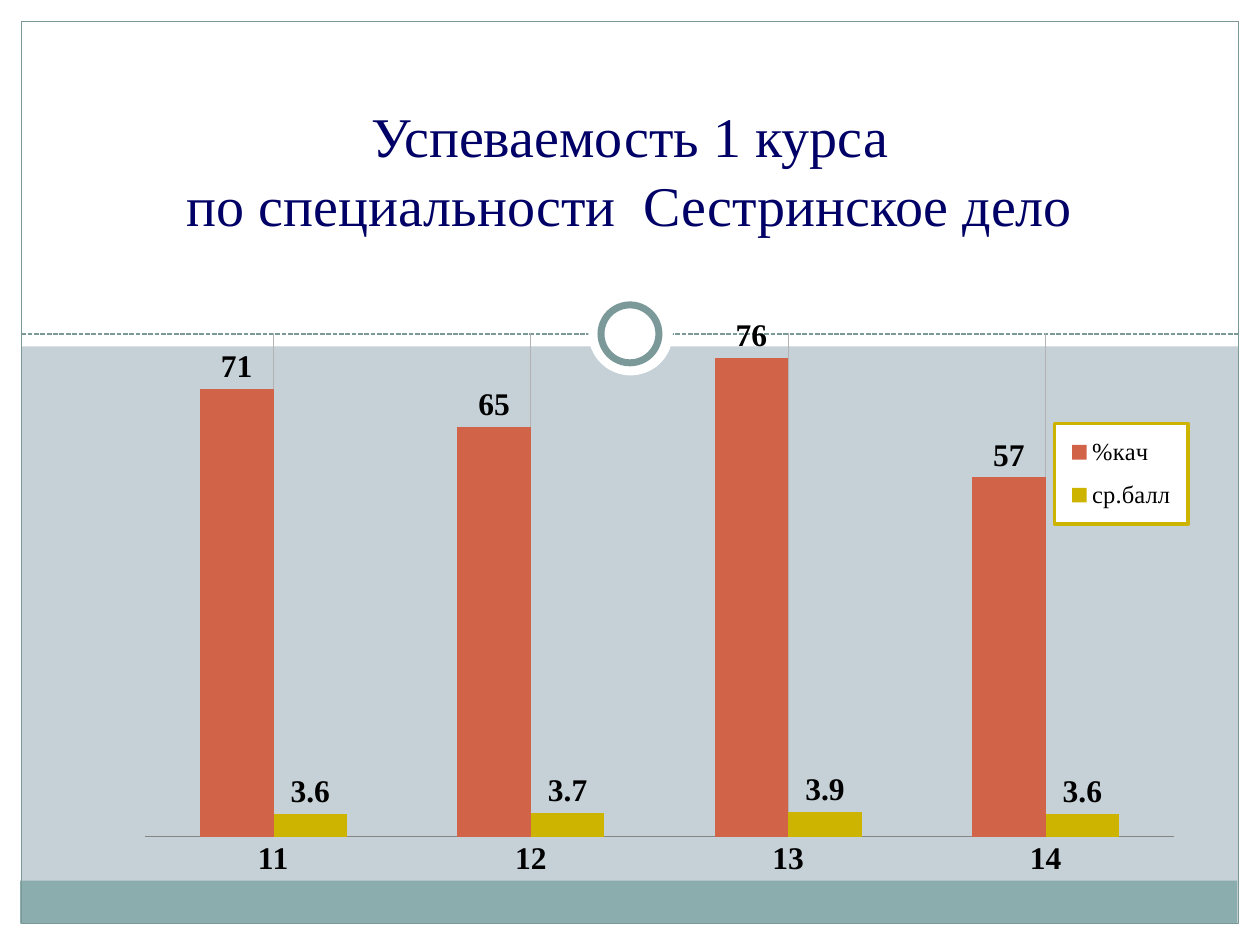
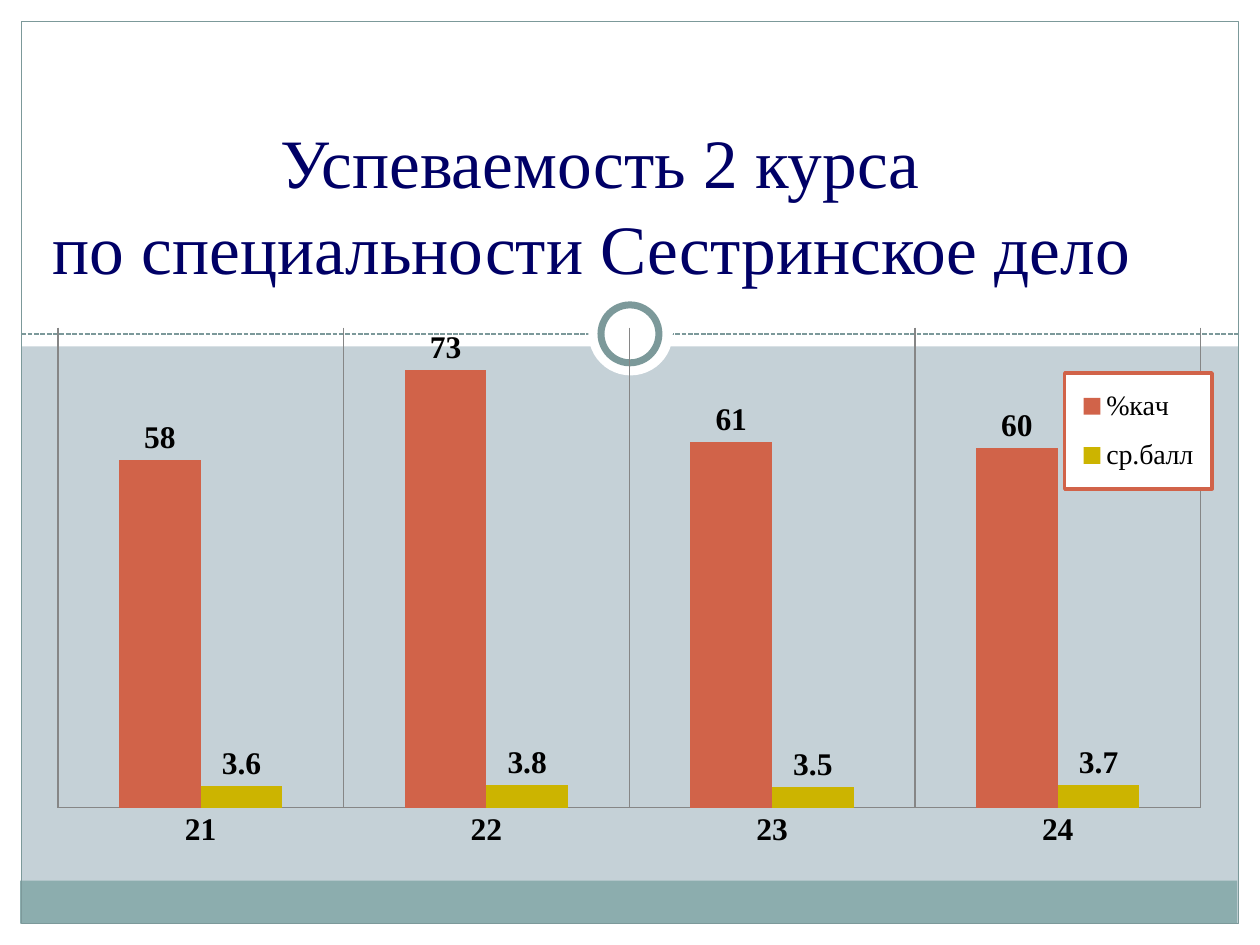
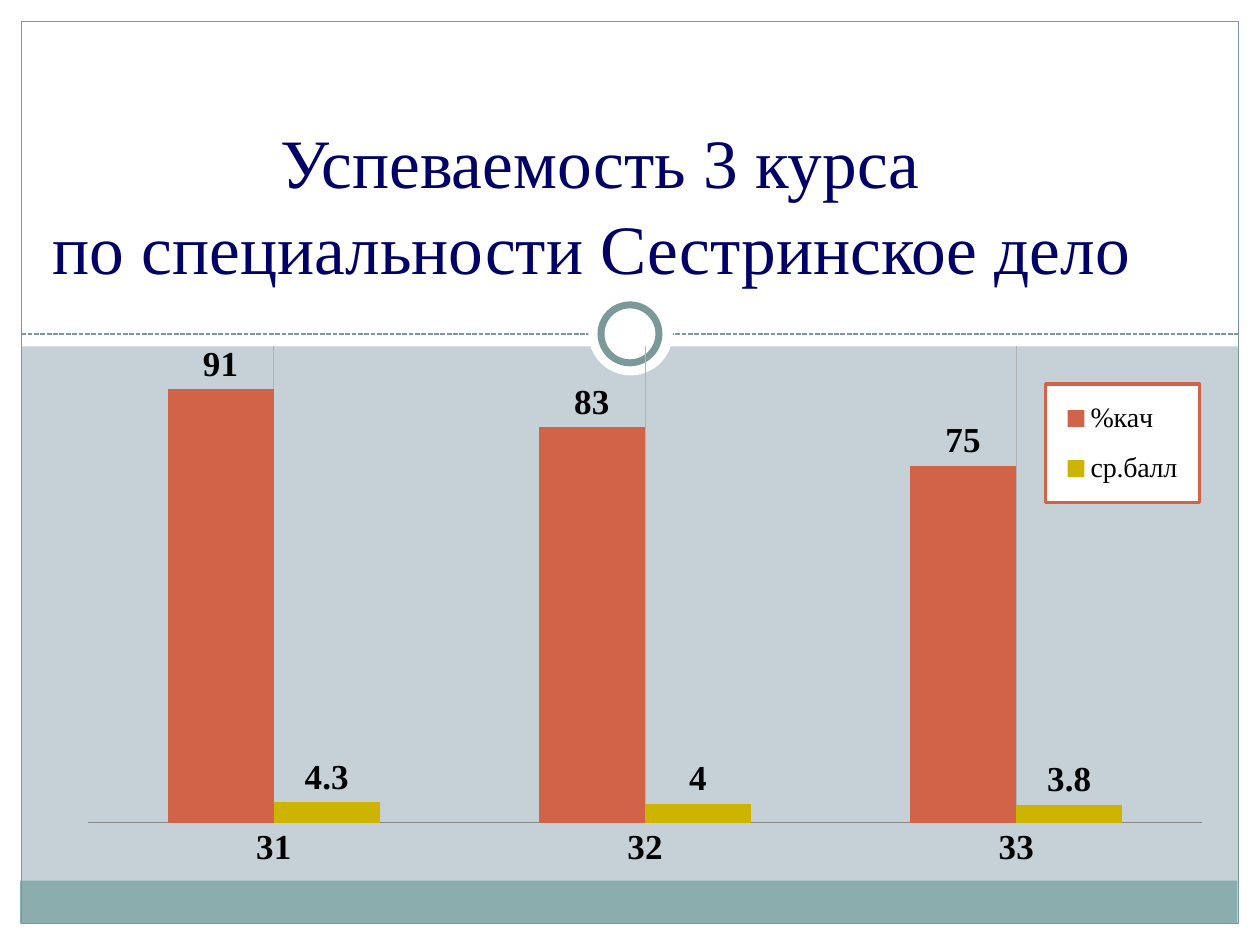
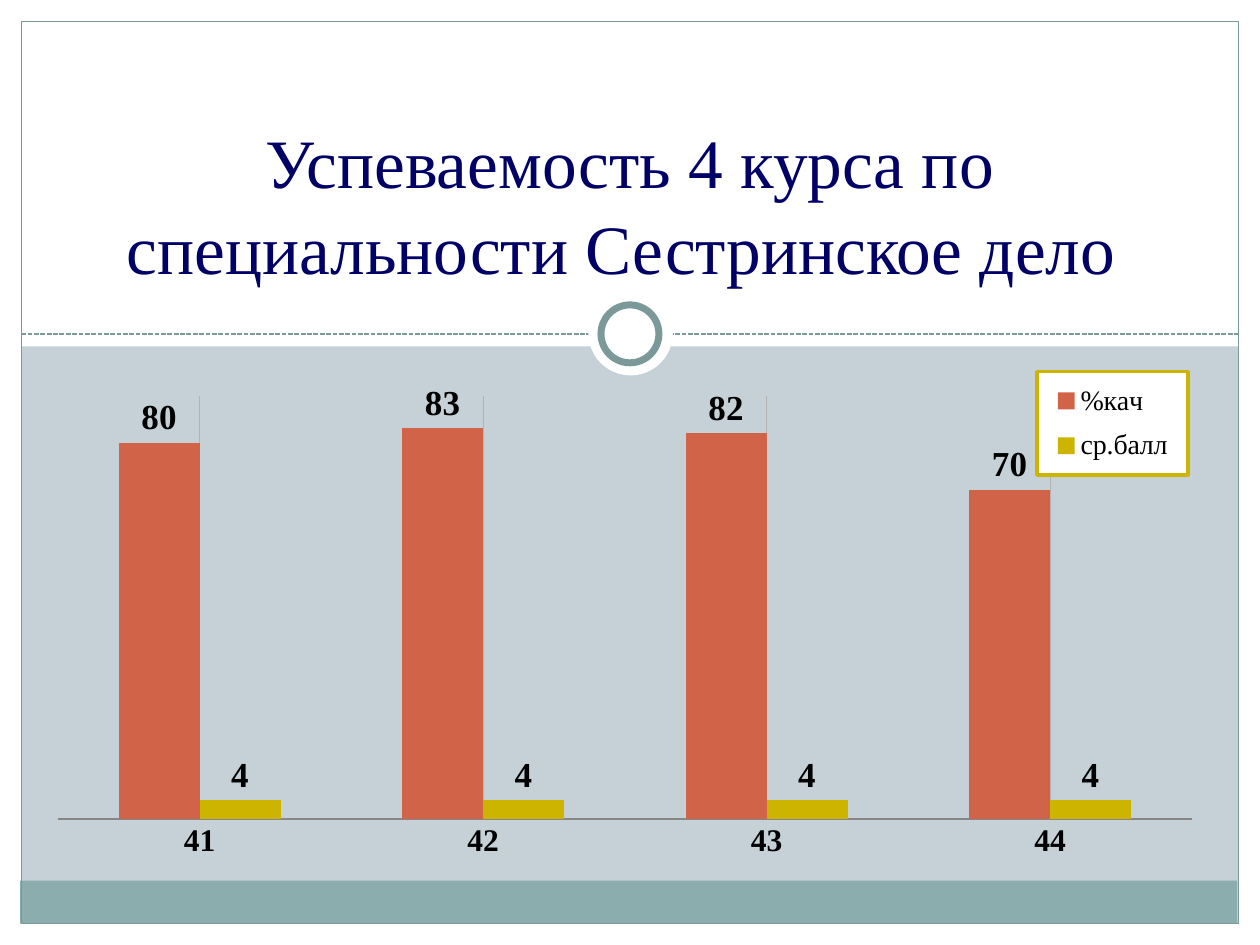
import copy

import pptx
import pptx.chart.data
import pptx.dml.color
import pptx.enum.chart
import pptx.enum.dml
import pptx.enum.shapes
import pptx.enum.text
import pptx.oxml
import pptx.oxml.ns
import pptx.util
from pptx.util import Inches

WHITE, BACKDROP, BAND, RULE = "FFFFFF", "C5D1D7", "8CADAE", "7C999A"
NAVY, BLACK, RED, GOLD = "000066", "000000", "D16349", "CCB400"
AXIS_GRAY, GRID_GRAY = "868686", "B3B3B3"
SERIF, CHART_FONT = "Times New Roman", "TeX Gyre Schola"
SHAPE = pptx.enum.shapes.MSO_SHAPE

# Boxes are (left, top, width, height) in inches on the slide
COURSES = [
    dict(title="Успеваемость 1 курса\v по специальности  Сестринское дело ",
         title_box=(0.75, 0.42, 8.5, 1.52), title_size=32,
         groups=["11", "12", "13", "14"],
         quality=[71, 65, 76, 57], average=[3.6, 3.7, 3.9, 3.6],
         chart_box=(0.98, 2.18, 8.5, 4.88), plot_box=(1.15, 2.64, 8.17, 4),
         legend_box=(8.37, 3.36, 1.06, 0.8), legend_size=14, legend_line=GOLD,
         top_value=80, group_size=18, label_size=18, boundary_grid=False),
    dict(title="Успеваемость 2 курса\vпо специальности Сестринское дело ",
         title_box=(0.28, 0.42, 8.97, 1.92), title_size=39.6,
         groups=["21", "22", "23", "24"],
         quality=[58, 73, 61, 60], average=[3.6, 3.8, 3.5, 3.7],
         chart_box=(0.28, 2.1, 9.45, 4.72), plot_box=(0.46, 2.6, 9.07, 3.81),
         legend_box=(8.45, 2.96, 1.17, 0.92), legend_size=16, legend_line=RED,
         top_value=80, group_size=18, label_size=18, boundary_grid=True),
    dict(title="Успеваемость 3 курса\vпо специальности Сестринское дело ",
         title_box=(0.28, 0.42, 8.97, 1.92), title_size=39.6,
         groups=["31", "32", "33"],
         quality=[91, 83, 75], average=[4.3, 4, 3.8],
         chart_box=(0.51, 2.25, 9.21, 4.73), plot_box=(0.7, 2.75, 8.84, 3.78),
         legend_box=(8.3, 3.05, 1.22, 0.94), legend_size=16, legend_line=RED,
         top_value=100, group_size=20, label_size=20, boundary_grid=False),
    dict(title="Успеваемость 4 курса по специальности Сестринское дело ",
         title_box=(0.75, 0.42, 8.5, 1.92), title_size=39.6,
         groups=["41", "42", "43", "44"],
         quality=[80, 83, 82, 70], average=[4, 4, 4, 4],
         chart_box=(0.28, 2.65, 9.37, 4.25), plot_box=(0.46, 3.14, 9, 3.36),
         legend_box=(8.23, 2.95, 1.2, 0.82), legend_size=16, legend_line=GOLD,
         top_value=90, group_size=18, label_size=20, boundary_grid=False),
]


def rgb(color):
    return pptx.dml.color.RGBColor.from_string(color)


def inches(box):
    return [Inches(length) for length in box]


def style_font(font, size, color=BLACK, bold=False, name=SERIF):
    font.name, font.size, font.bold = name, pptx.util.Pt(size), bold
    font.color.rgb = rgb(color)


def style_line(line, color, width):
    line.color.rgb = rgb(color)
    line.width = pptx.util.Pt(width)


# Shared frame, kept on the layout
def add_panel(shapes, kind, box, fill=None, line=None, width=0.75):
    panel = shapes.add_shape(kind, *inches(box))
    panel.shadow.inherit = False
    if fill:
        panel.fill.solid()
        panel.fill.fore_color.rgb = rgb(fill)
    else:
        panel.fill.background()
    if line:
        style_line(panel.line, line, width)
    else:
        panel.line.fill.background()
    return panel


def add_divider(shapes):
    divider = shapes.add_connector(pptx.enum.shapes.MSO_CONNECTOR.STRAIGHT,
                                   *inches((0.17, 2.65, 9.83, 2.65)))
    style_line(divider.line, RULE, 0.9)
    divider.line.dash_style = pptx.enum.dml.MSO_LINE.SQUARE_DOT
    divider.element.spPr.append(pptx.oxml.parse_xml(
        f'<a:effectLst {pptx.oxml.ns.nsdecls("a")}/>'))
    return divider


def decorate_layout(layout, slide):
    """Draw the frame with the slide's shape tools, then move it to the layout."""
    layout.background.fill.solid()
    layout.background.fill.fore_color.rgb = rgb(BACKDROP)
    shapes = slide.shapes
    margins = [(0, 7.33, 10, 0.17), (9.83, 0, 0.17, 7.5),
               (0, 0, 0.17, 7.5), (0, 0, 10, 2.75)]
    frame = [add_panel(shapes, SHAPE.RECTANGLE, box, WHITE) for box in margins]
    frame += [
        add_panel(shapes, SHAPE.RECTANGLE, (0.16, 6.99, 9.66, 0.34), BAND),
        add_divider(shapes),
        add_panel(shapes, SHAPE.RECTANGLE, (0.17, 0.17, 9.66, 7.16), line=RULE),
        add_panel(shapes, SHAPE.OVAL, (4.67, 2.31, 0.67, 0.67), WHITE),
        add_panel(shapes, SHAPE.OVAL, (4.77, 2.42, 0.46, 0.46), WHITE, RULE, 4),
    ]
    for part in frame:
        layout.shapes.element.append(part.element)


# Title
def set_title(slide, text, box, size):
    title = slide.shapes.title
    title.left, title.top, title.width, title.height = inches(box)
    frame = title.text_frame
    frame.text = text
    frame.word_wrap = True
    frame.auto_size = pptx.enum.text.MSO_AUTO_SIZE.NONE
    frame.vertical_anchor = pptx.enum.text.MSO_ANCHOR.BOTTOM
    paragraph = frame.paragraphs[0]
    paragraph.alignment = pptx.enum.text.PP_ALIGN.CENTER
    paragraph.line_spacing = 1.04
    for run in paragraph.runs:
        style_font(run.font, size, NAVY)
    # A line break takes the size of the text around it
    for line_break in paragraph._p.findall(pptx.oxml.ns.qn("a:br")):
        line_break.append(copy.deepcopy(paragraph.runs[0]._r.rPr))


# Chart
def outline_xml(color, width):
    return (f'<a:ln w="{pptx.util.Pt(width)}"><a:solidFill>'
            f'<a:srgbClr val="{color}"/></a:solidFill></a:ln>')


def chart_format(content):
    return pptx.oxml.parse_xml(
        f'<c:spPr {pptx.oxml.ns.nsdecls("c", "a")}>{content}</c:spPr>')


def place_in_chart(element, index, box, chart_box, target=""):
    """Give a chart part a manual layout as fractions of the chart box."""
    for old in element.findall(pptx.oxml.ns.qn("c:layout")):
        element.remove(old)
    left, top, width, height = chart_box
    fractions = {"x": (box[0] - left) / width, "y": (box[1] - top) / height,
                 "w": box[2] / width, "h": box[3] / height}
    modes = '<c:xMode val="edge"/><c:yMode val="edge"/>'
    values = "".join(f'<c:{key} val="{value:.4f}"/>'
                     for key, value in fractions.items())
    element.insert(index, pptx.oxml.parse_xml(
        f'<c:layout {pptx.oxml.ns.nsdecls("c")}><c:manualLayout>'
        f'{target}{modes}{values}</c:manualLayout></c:layout>'))


def style_series(series, color, label_size):
    series.format.fill.solid()
    series.format.fill.fore_color.rgb = rgb(color)
    series.invert_if_negative = False
    labels = series.data_labels
    labels.show_value = True
    labels.position = pptx.enum.chart.XL_LABEL_POSITION.OUTSIDE_END
    style_font(labels.font, label_size, bold=True)


def style_axes(chart, top_value, group_size, boundary_grid):
    scores = chart.value_axis
    scores.minimum_scale, scores.maximum_scale = 0, top_value
    scores.has_major_gridlines = False
    scores.visible = False
    groups = chart.category_axis
    groups.major_tick_mark = pptx.enum.chart.XL_TICK_MARK.NONE
    groups.minor_tick_mark = pptx.enum.chart.XL_TICK_MARK.NONE
    style_font(groups.tick_labels.font, group_size, bold=True)
    style_line(groups.format.line, AXIS_GRAY, 0.75)
    groups.has_major_gridlines = boundary_grid
    groups.has_minor_gridlines = not boundary_grid
    if boundary_grid:
        style_line(groups.major_gridlines.format.line, AXIS_GRAY, 0.75)
    else:
        middle_grid = groups._element.find(pptx.oxml.ns.qn("c:minorGridlines"))
        middle_grid.append(chart_format(outline_xml(GRID_GRAY, 0.5)))


def add_legend(chart, box, chart_box, size, line):
    chart.has_legend = True
    legend = chart.legend
    legend.position = pptx.enum.chart.XL_LEGEND_POSITION.TOP
    legend.include_in_layout = False
    style_font(legend.font, size)
    element = legend._element
    place_in_chart(element, 1, box, chart_box)
    white_fill = f'<a:solidFill><a:srgbClr val="{WHITE}"/></a:solidFill>'
    element.find(pptx.oxml.ns.qn("c:txPr")).addprevious(
        chart_format(white_fill + outline_xml(line, 2)))


def add_results_chart(slide, course):
    results = pptx.chart.data.CategoryChartData()
    results.categories = course["groups"]
    results.add_series("%кач", course["quality"])
    results.add_series("ср.балл", course["average"])
    chart_box = course["chart_box"]
    chart = slide.shapes.add_chart(
        pptx.enum.chart.XL_CHART_TYPE.COLUMN_CLUSTERED,
        *inches(chart_box), results).chart
    chart.has_title = False
    style_font(chart.font, 10, name=CHART_FONT)
    plot = chart.plots[0]
    plot.gap_width, plot.overlap, plot.vary_by_categories = 150, 0, False
    for series, color in zip(plot.series, (RED, GOLD)):
        style_series(series, color, course["label_size"])
    style_axes(chart, course["top_value"], course["group_size"],
               course["boundary_grid"])
    place_in_chart(chart._chartSpace.chart.plotArea, 0, course["plot_box"],
                   chart_box, '<c:layoutTarget val="inner"/>')
    add_legend(chart, course["legend_box"], chart_box,
               course["legend_size"], course["legend_line"])


def main():
    deck = pptx.Presentation()
    deck.slide_width, deck.slide_height = Inches(10), Inches(7.5)
    layout = deck.slide_layouts[0]
    for number, course in enumerate(COURSES):
        slide = deck.slides.add_slide(layout)
        subtitle = slide.placeholders[1].element
        subtitle.getparent().remove(subtitle)
        if number == 0:
            decorate_layout(layout, slide)
        set_title(slide, course["title"], course["title_box"],
                  course["title_size"])
        add_results_chart(slide, course)
    deck.save("out.pptx")


if __name__ == "__main__":
    main()
